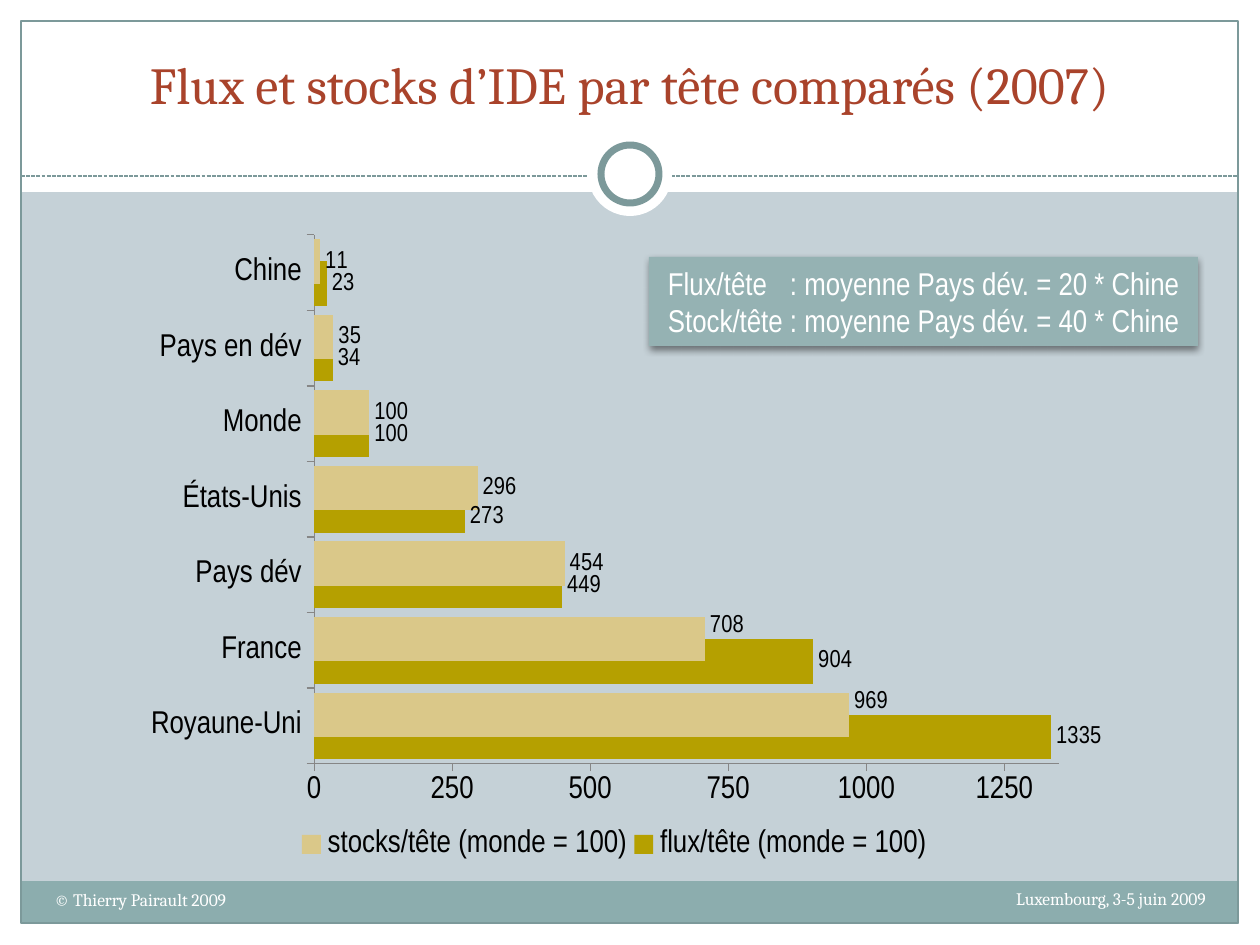
from lxml import etree
from pptx import Presentation
from pptx.chart.data import CategoryChartData
from pptx.dml.color import RGBColor
from pptx.enum.chart import XL_CHART_TYPE, XL_LABEL_POSITION, XL_LEGEND_POSITION, XL_TICK_MARK
from pptx.enum.dml import MSO_LINE
from pptx.enum.shapes import MSO_CONNECTOR, MSO_SHAPE
from pptx.enum.text import MSO_ANCHOR, MSO_AUTO_SIZE, PP_ALIGN
from pptx.oxml import parse_xml
from pptx.oxml.ns import nsdecls, qn
from pptx.util import Pt

EMU_PER_PX = 914400 / 126
RECTANGLE, OVAL = MSO_SHAPE.RECTANGLE, MSO_SHAPE.OVAL
LEFT, CENTER, RIGHT = PP_ALIGN.LEFT, PP_ALIGN.CENTER, PP_ALIGN.RIGHT
TOP, MIDDLE = MSO_ANCHOR.TOP, MSO_ANCHOR.MIDDLE
OUTSIDE_END = XL_LABEL_POSITION.OUTSIDE_END
SERIF, NARROW = "Cambria", "Arial Narrow"
COLORS = {
    "background": "C5D1D7", "white": "FFFFFF", "black": "000000",
    "footer": "8CADAE", "border": "7C999A", "title": "A9432B",
    "note": "95B2B3", "axis": "868686", "flux": "B5A000", "stocks": "DAC889",
}
CATEGORIES = ["Royaune-Uni", "France", "Pays dév", "États-Unis", "Monde", "Pays en dév", "Chine"]
SERIES = [
    ("flux", "flux/tête (monde = 100)", [1335, 904, 449, 273, 100, 34, 23], {3: 0.01}),
    ("stocks", "stocks/tête (monde = 100)", [969, 708, 454, 296, 100, 35, 11], {0: -0.02, 1: -0.02}),
]
NOTE = "Flux/tête\t: moyenne Pays dév. = 20 * Chine\nStock/tête\t: moyenne Pays dév. = 40 * Chine"


def px(*lengths):
    """Turn pixel lengths into a list of EMU."""
    return [round(length * EMU_PER_PX) for length in lengths]


def color(name):
    """Return a named colour."""
    return RGBColor.from_string(COLORS[name])


def style_font(font, size, face=NARROW, tint="black"):
    """Set the face, size and colour of a font."""
    font.name, font.size, font.bold = face, Pt(size), False
    font.color.rgb = color(tint)


def write(box, text, size, face=SERIF, tint="white", align=LEFT, anchor=TOP):
    """Fill a shape with formatted text, one paragraph a line."""
    frame = box.text_frame
    frame.text = text
    frame.word_wrap, frame.auto_size = True, MSO_AUTO_SIZE.NONE
    frame.vertical_anchor = anchor
    for para in frame.paragraphs:
        para.alignment = align
        for span in para.runs:
            style_font(span.font, size, face, tint)


def add_box(page, kind, place, fill=None, line=None, width=0.75):
    """Add a preset shape with an optional fill and outline."""
    box = page.shapes.add_shape(kind, *px(*place))
    box.shadow.inherit = False
    if fill:
        box.fill.solid()
        box.fill.fore_color.rgb = color(fill)
    else:
        box.fill.background()
    if line:
        box.line.color.rgb = color(line)
        box.line.width = Pt(width)
    else:
        box.line.fill.background()
    return box


def add_rule(page, start, end):
    """Add a thin dashed line."""
    rule = page.shapes.add_connector(MSO_CONNECTOR.STRAIGHT, *px(*start, *end))
    rule.line.color.rgb = color("border")
    rule.line.width = Pt(0.75)
    rule.line.dash_style = MSO_LINE.SQUARE_DOT
    etree.SubElement(rule._element.spPr, qn("a:effectLst"))


def add_frame(page):
    """Draw the margins, footer band, border and ring."""
    for place in [(0, 924, 1260, 21), (0, 0, 1260, 192), (0, 0, 21, 945), (1239, 0, 21, 945)]:
        add_box(page, RECTANGLE, place, "white")
    add_box(page, RECTANGLE, (21, 881, 1217, 43), "footer")
    add_box(page, RECTANGLE, (21, 21, 1217, 902), line="border")
    add_rule(page, (21, 176), (1239, 176))
    add_box(page, OVAL, (588, 132, 84, 84), "white")
    add_box(page, OVAL, (601, 145, 58, 58), "white", "border", 4)


def add_title(page, text):
    """Place the title above the frame shapes."""
    title = page.shapes.title
    title.left, title.top, title.width, title.height = px(42, 32, 1176, 104)
    write(title, text, 29.7, tint="title", align=CENTER, anchor=MIDDLE)
    page.shapes._spTree.append(title._element)


def add_text(page, place, text, **style):
    """Add a text box."""
    write(page.shapes.add_textbox(*px(*place)), text, **style)


def manual_layout(**values):
    """Build a manual chart layout from fractions."""
    parts = "".join(f'<c:{key} val="{value}"/>' for key, value in values.items())
    return parse_xml(f'<c:layout {nsdecls("c")}><c:manualLayout>{parts}</c:manualLayout></c:layout>')


def style_series(series, tint, offsets):
    """Colour a series, label it and shift some of its labels."""
    series.format.fill.solid()
    series.format.fill.fore_color.rgb = color(tint)
    series.invert_if_negative = False
    labels = series.data_labels
    labels.show_value, labels.position = True, OUTSIDE_END
    labels.number_format, labels.number_format_is_linked = "0", False
    style_font(labels.font, 14)
    for index, shift in offsets.items():
        label = series.points[index].data_label
        label.position = OUTSIDE_END
        style_font(label.font, 14)
        element = series._element.xpath(f".//c:dLbl[c:idx/@val='{index}']")[0]
        element.insert(1, manual_layout(x=0, y=shift))


def style_axis(axis):
    """Give an axis outside ticks, a grey line and no grid."""
    axis.has_major_gridlines = False
    axis.major_tick_mark, axis.minor_tick_mark = XL_TICK_MARK.OUTSIDE, XL_TICK_MARK.NONE
    axis.format.line.color.rgb = color("axis")
    axis.format.line.width = Pt(0.75)
    style_font(axis.tick_labels.font, 18)


def add_bar_chart(page, place):
    """Add the chart of flows and stocks per head."""
    data = CategoryChartData(number_format="0")
    data.categories = CATEGORIES
    for _, name, values, _ in SERIES:
        data.add_series(name, values)
    chart = page.shapes.add_chart(XL_CHART_TYPE.BAR_CLUSTERED, *px(*place), data).chart
    style_font(chart.font, 18, SERIF)
    chart.has_title = False
    plot = chart.plots[0]
    plot.gap_width, plot.overlap, plot.vary_by_categories = 20, 50, False
    for series, (tint, _, _, offsets) in zip(plot.series, SERIES):
        style_series(series, tint, offsets)
    style_axis(chart.category_axis)
    values = chart.value_axis
    style_axis(values)
    values.minimum_scale, values.maximum_scale, values.major_unit = 0, 1350, 250
    values.tick_labels.number_format, values.tick_labels.number_format_is_linked = "0", False
    chart.has_legend = True
    legend = chart.legend
    legend.position, legend.include_in_layout = XL_LEGEND_POSITION.BOTTOM, False
    style_font(legend.font, 18)
    for old in legend._element.findall(qn("c:layout")):
        legend._element.remove(old)
    legend._element.insert(1, manual_layout(xMode="edge", yMode="edge", x=0.16, y=0.93, w=0.66, h=0.07))
    area = chart._chartSpace.chart.plotArea
    for old in area.findall(qn("c:layout")):
        area.remove(old)
    area.insert(0, manual_layout(layoutTarget="inner", xMode="edge", yMode="edge",
                                 x=0.18, y=0.02, w=0.77, h=0.82))


def add_note(page, place, text):
    """Add the shadowed note with its colons aligned on a tab stop."""
    note = add_box(page, RECTANGLE, place, "note")
    write(note, text, 18, NARROW, anchor=MIDDLE)
    note.text_frame.margin_left, note.text_frame.margin_right, stop = px(19, 0, 122)
    for para in note.text_frame.paragraphs:
        tabs = etree.SubElement(para._p.get_or_add_pPr(), qn("a:tabLst"))
        etree.SubElement(tabs, qn("a:tab"), pos=str(stop), algn="l")
    effects = note._element.spPr.find(qn("a:effectLst"))
    effects.append(parse_xml(
        f'<a:outerShdw {nsdecls("a")} blurRad="{Pt(4)}" dist="{Pt(2)}" dir="5400000" rotWithShape="0">'
        f'<a:srgbClr val="{COLORS["black"]}"><a:alpha val="45000"/></a:srgbClr></a:outerShdw>'))


def main():
    """Build and save the slide."""
    deck = Presentation()
    deck.slide_width, deck.slide_height = px(1260, 945)
    page = deck.slides.add_slide(deck.slide_layouts[5])
    page.background.fill.solid()
    page.background.fill.fore_color.rgb = color("background")
    add_frame(page)
    add_title(page, "Flux et stocks d’IDE par tête comparés (2007)")
    add_text(page, (798, 882, 420, 50), "Luxembourg, 3-5 juin 2009", size=10, align=RIGHT)
    add_text(page, (42, 883, 494, 50), "© Thierry Pairault 2009", size=10)
    add_bar_chart(page, (140, 222, 968, 645))
    add_note(page, (649, 257, 549, 89), NOTE)
    deck.save("out.pptx")


if __name__ == "__main__":
    main()
